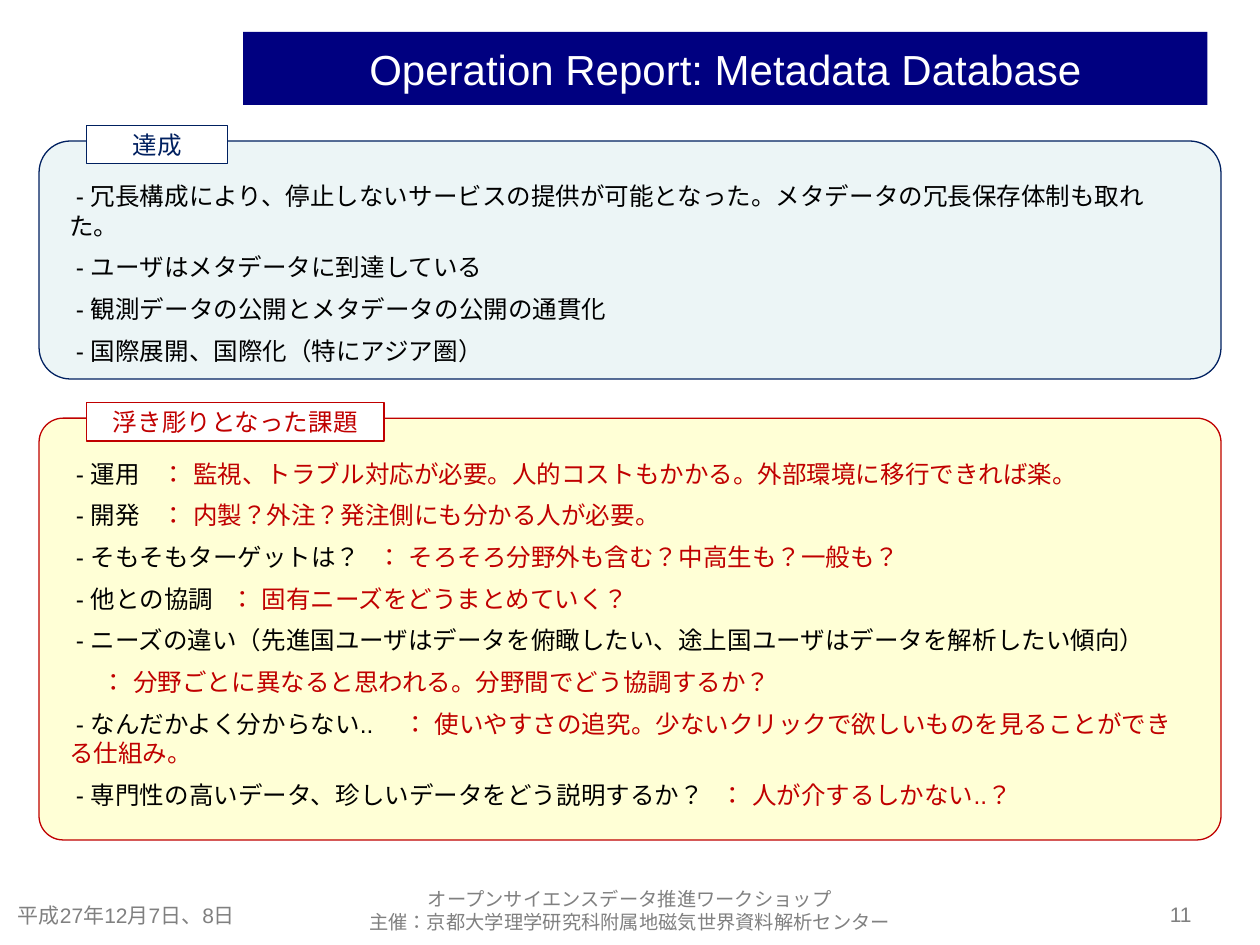
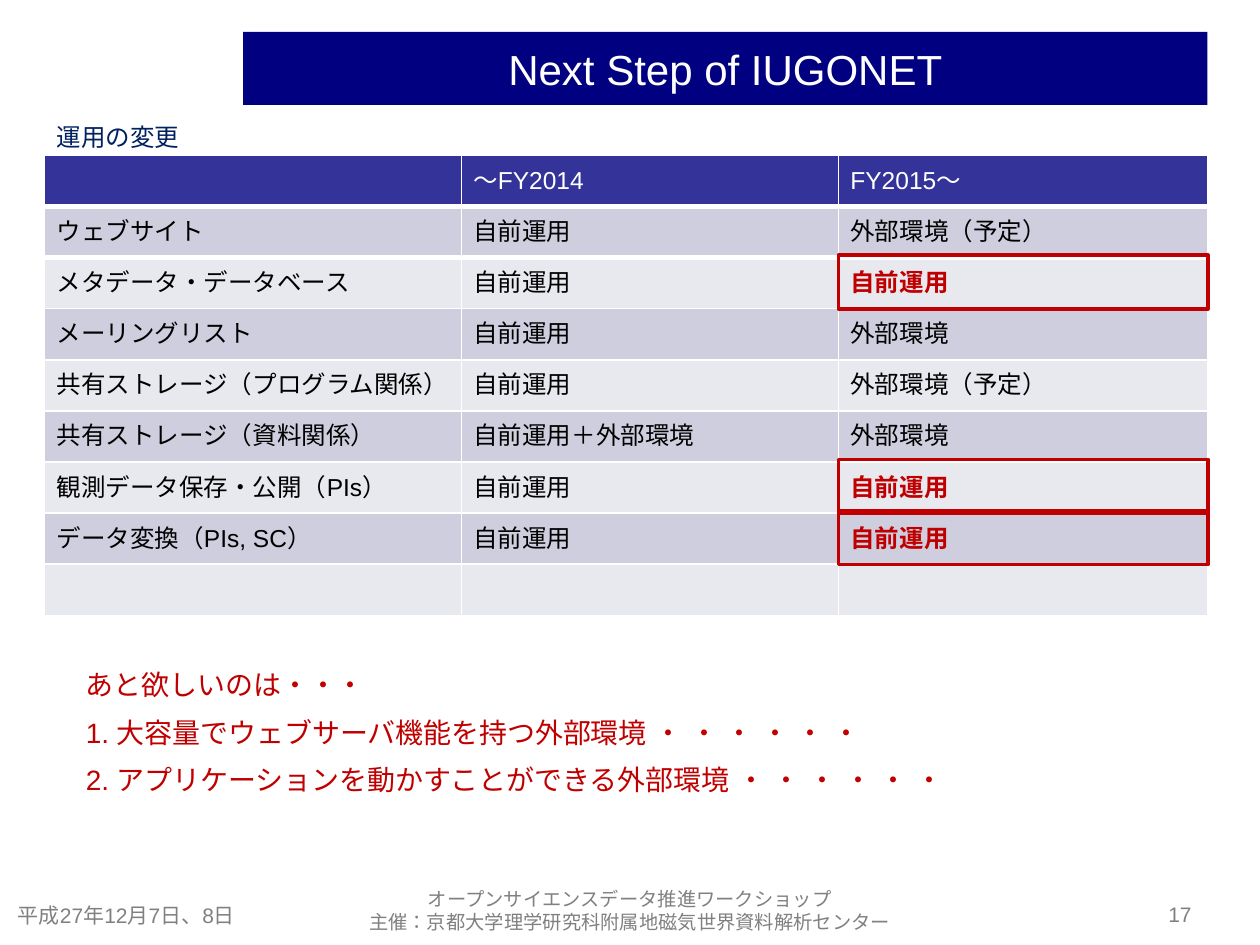
from lxml import etree
from pptx import Presentation
from pptx.dml.color import RGBColor
from pptx.enum import lang, shapes, text
from pptx.oxml import ns
from pptx.util import Pt

WHITE = RGBColor(0xFF, 0xFF, 0xFF)
BLACK = RGBColor(0, 0, 0)
BAND = RGBColor(0, 0, 0x80)
NAVY = RGBColor(0, 0x20, 0x60)
RED = RGBColor(0xC0, 0, 0)
GRAY = RGBColor(0x80, 0x80, 0x80)
PALE_BLUE = RGBColor(0xDA, 0xED, 0xEF)
PALE_YELLOW = RGBColor(0xFF, 0xFF, 0xCC)
HEADER = RGBColor(0x33, 0x33, 0x99)
STRIPES = (RGBColor(0xCE, 0xCE, 0xDE), RGBColor(0xE8, 0xE8, 0xEF))

LATIN = "Arial"
GOTHIC = "Noto Sans CJK JP"
LEFT, CENTER, RIGHT = text.PP_ALIGN.LEFT, text.PP_ALIGN.CENTER, text.PP_ALIGN.RIGHT
TOP, MIDDLE = text.MSO_ANCHOR.TOP, text.MSO_ANCHOR.MIDDLE
RECT, ROUND = shapes.MSO_SHAPE.RECTANGLE, shapes.MSO_SHAPE.ROUNDED_RECTANGLE

REPLY_INDENT = 18.8
PANEL_LEFT, PANEL_WIDTH = 22.3, 675.4

ACHIEVEMENTS = [
    " - 冗長構成により、停止しないサービスの提供が可能となった。メタデータの冗長保存体制も取れた。",
    " - ユーザはメタデータに到達している",
    " - 観測データの公開とメタデータの公開の通貫化",
    " - 国際展開、国際化（特にアジア圏）",
]
ISSUES = [
    (" - 運用", "： 監視、トラブル対応が必要。人的コストもかかる。外部環境に移行できれば楽。", 53),
    (" - 開発", "： 内製？外注？発注側にも分かる人が必要。", 53),
    (" - そもそもターゲットは？", "： そろそろ分野外も含む？中高生も？一般も？", 176),
    (" - 他との協調", "： 固有ニーズをどうまとめていく？", 92),
    (" - ニーズの違い（先進国ユーザはデータを俯瞰したい、途上国ユーザはデータを解析したい傾向）", "", 0),
    ("", "： 分野ごとに異なると思われる。分野間でどう協調するか？", 0),
    (" - なんだかよく分からない..", "： 使いやすさの追究。少ないクリックで欲しいものを見ることができる仕組み。", 191),
    (" - 専門性の高いデータ、珍しいデータをどう説明するか？", "： 人が介するしかない..？", 372.5),
]
OWN, OUTSIDE, PLANNED = "自前運用", "外部環境", "外部環境（予定）"
OPERATIONS = [
    ("", "～FY2014", "FY2015～"),
    ("ウェブサイト", OWN, PLANNED),
    ("メタデータ・データベース", OWN, OWN),
    ("メーリングリスト", OWN, OUTSIDE),
    ("共有ストレージ（プログラム関係）", OWN, PLANNED),
    ("共有ストレージ（資料関係）", "自前運用＋外部環境", OUTSIDE),
    ("観測データ保存・公開（PIs）", OWN, OWN),
    ("データ変換（PIs, SC）", OWN, OWN),
    ("", "", ""),
]
WISHES = [
    "あと欲しいのは・・・",
    "1. 大容量でウェブサーバ機能を持つ外部環境 ・ ・ ・ ・ ・ ・",
    "2. アプリケーションを動かすことができる外部環境 ・ ・ ・ ・ ・ ・",
]


def style_run(r, size, color, bold=False, font=LATIN):
    r.font.size, r.font.bold, r.font.name = Pt(size), bold, font
    r.font.color.rgb = color
    r.font.language_id = lang.MSO_LANGUAGE_ID.JAPANESE
    ea = etree.SubElement(r.font._element, ns.qn("a:ea"))
    ea.set("typeface", font)


def write(tf, lines, size, color, align=LEFT, anchor=MIDDLE, gap=0, bold=False, font=LATIN):
    tf.word_wrap = True
    tf.vertical_anchor = anchor
    for i, line in enumerate(lines):
        p = tf.paragraphs[0] if i == 0 else tf.add_paragraph()
        p.alignment = align
        if i and gap:
            p.space_before = Pt(gap)
        r = p.add_run()
        r.text = line
        style_run(r, size, color, bold, font)


def add_tab(p, position):
    tabs = etree.SubElement(p._p.get_or_add_pPr(), ns.qn("a:tabLst"))
    etree.SubElement(tabs, ns.qn("a:tab"), pos=str(int(Pt(position))), algn="l")


def add_text(s, box, lines, size, color, **style):
    tf = s.shapes.add_textbox(*map(Pt, box)).text_frame
    write(tf, lines, size, color, **style)
    return tf


def add_box(s, kind, box, fill=None, line=None, width=0.75):
    sp = s.shapes.add_shape(kind, *map(Pt, box))
    sp.shadow.inherit = False
    if fill is None:
        sp.fill.background()
    else:
        sp.fill.solid()
        sp.fill.fore_color.rgb = fill
    if line is None:
        sp.line.fill.background()
    else:
        sp.line.color.rgb = line
        sp.line.width = Pt(width)
    return sp


def add_panel(s, top, height, radius, fill, opacity, color, label, label_width):
    sp = add_box(s, ROUND, (PANEL_LEFT, top, PANEL_WIDTH, height), fill, color)
    sp.adjustments[0] = radius
    clr = sp.fill._xPr.find(ns.qn("a:solidFill"))[0]
    etree.SubElement(clr, ns.qn("a:alpha"), val=str(opacity * 1000))
    tag = add_box(s, RECT, (49.5, top - 9, label_width, 22), WHITE, color)
    write(tag.text_frame, [label], 14, color, align=CENTER)


def add_frame(prs, title, number):
    s = prs.slides.add_slide(prs.slide_layouts[6])
    band = add_box(s, RECT, (139, 18.2, 551, 41.8), BAND)
    write(band.text_frame, [title], 24, WHITE, align=CENTER)
    add_text(s, (648.5, 510.5, 39.5, 24), [number], 12, GRAY, align=RIGHT)
    add_text(s, (105, 504.2, 510, 32.4),
             ["オープンサイエンスデータ推進ワークショップ",
              "主催：京都大学理学研究科附属地磁気世界資料解析センター"],
             11, GRAY, align=CENTER, font=GOTHIC)
    add_text(s, (0, 508.5, 144.5, 28.5), ["平成27年12月7日、8日"], 12, GRAY, align=CENTER)
    return s


def add_issues(s, box):
    tf = add_text(s, box, [issue for issue, _, _ in ISSUES], 14, BLACK, anchor=TOP, gap=7)
    for p, (issue, reply, tab) in zip(tf.paragraphs, ISSUES):
        if tab:
            add_tab(p, tab)
        if not issue:
            p._p.get_or_add_pPr().set("indent", str(int(Pt(REPLY_INDENT))))
        if reply:
            r = p.add_run()
            r.text = "\t" + reply if tab else reply
            style_run(r, 14, RED)


def add_rule(cell, side, width):
    ln = etree.Element(ns.qn("a:" + side), w=str(int(Pt(width))))
    fill = etree.SubElement(ln, ns.qn("a:solidFill"))
    etree.SubElement(fill, ns.qn("a:srgbClr"), val=str(WHITE))
    cell._tc.get_or_add_tcPr().insert(0, ln)


def add_operations(s, left, top, widths, row_height):
    rows = len(OPERATIONS)
    table = s.shapes.add_table(rows, len(widths), Pt(left), Pt(top),
                               Pt(sum(widths)), Pt(row_height * rows)).table
    for column, width in zip(table.columns, widths):
        column.width = Pt(width)
    kept = []
    for i, values in enumerate(OPERATIONS):
        table.rows[i].height = Pt(row_height)
        for j, value in enumerate(values):
            keep = j == 2 and value == OWN
            color = WHITE if i == 0 else RED if keep else BLACK
            cell = table.cell(i, j)
            cell.margin_left, cell.margin_right = Pt(6.8), Pt(2)
            cell.fill.solid()
            cell.fill.fore_color.rgb = STRIPES[(i - 1) % 2] if i else HEADER
            write(cell.text_frame, [value], 14, color, bold=keep)
            cell.vertical_anchor = MIDDLE
            if i < 2:
                add_rule(cell, "lnT" if i else "lnB", 3)
            if keep:
                kept.append(i)
    for i in kept:
        add_box(s, RECT, (left + sum(widths[:2]), top + i * row_height - 1.5, widths[2], 31),
                line=RED, width=2)


def build_report(prs):
    s = add_frame(prs, "Operation Report: Metadata Database", "11")
    add_panel(s, 80.6, 136, 0.132, PALE_BLUE, 50, NAVY, "達成", 80.6)
    add_text(s, (32.4, 100, 640, 116.6), ACHIEVEMENTS, 14, BLACK, anchor=TOP, gap=7)
    add_panel(s, 239, 241, 0.057, PALE_YELLOW, 80, RED, "浮き彫りとなった課題", 170)
    add_issues(s, (32.4, 258.5, 655, 221))


def build_next_step(prs):
    s = add_frame(prs, "Next Step of IUGONET", "17")
    add_text(s, (25.2, 66, 121, 28), ["運用の変更"], 14, NAVY, anchor=TOP)
    add_operations(s, 25.5, 88.8, (238.2, 215.5, 211), 29.2)
    add_text(s, (42, 378, 601, 113), WISHES, 16, RED, anchor=TOP, gap=8)


def main():
    prs = Presentation()
    prs.slide_width, prs.slide_height = Pt(720), Pt(540)
    build_report(prs)
    build_next_step(prs)
    prs.save("out.pptx")


if __name__ == "__main__":
    main()
